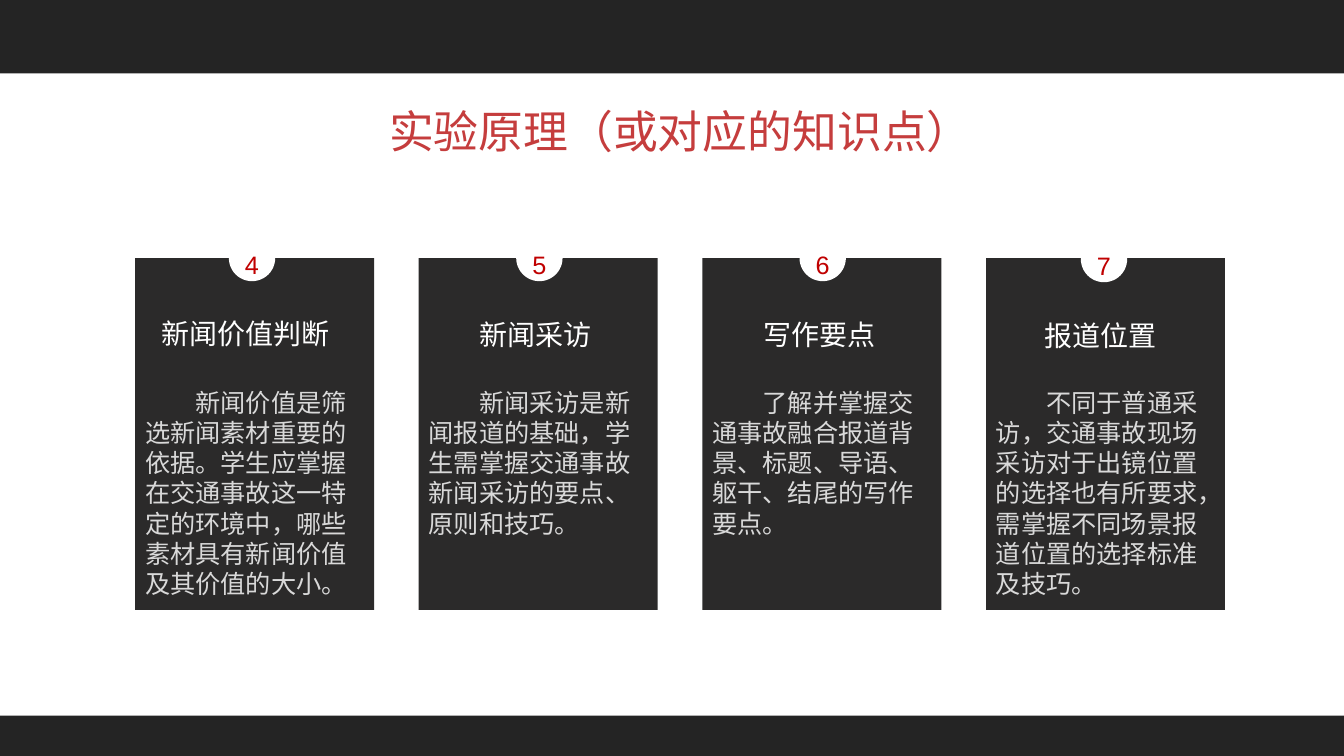
"""Build the slide on experiment principles with four numbered topic cards."""
from dataclasses import dataclass

from pptx import Presentation
from pptx.dml.color import RGBColor
from pptx.enum.shapes import MSO_SHAPE
from pptx.enum.text import MSO_ANCHOR, PP_ALIGN
from pptx.oxml.ns import qn
from pptx.shapes.autoshape import Shape
from pptx.slide import Slide
from pptx.util import Inches, Pt

RECTANGLE = MSO_SHAPE.RECTANGLE
BADGE = MSO_SHAPE.FLOWCHART_CONNECTOR
TOP, MIDDLE = MSO_ANCHOR.TOP, MSO_ANCHOR.MIDDLE
LEFT, CENTER = PP_ALIGN.LEFT, PP_ALIGN.CENTER

SLIDE_WIDTH, SLIDE_HEIGHT = 13.33, 7.5
CARD_LEFT, CARD_TOP, CARD_WIDTH, CARD_HEIGHT = 1.34, 2.56, 2.37, 3.49
CARD_STEP = 8.44 / 3
BADGE_SIZE = 0.46
HEADING_HEIGHT = 0.4
BAND, CARD, WHITE = "242424", "2B2A2A", "FFFFFF"
TITLE_RED, NUMBER_RED, BODY_GREY = "C53D3D", "C00000", "D9D9D9"
SANS_SC, SANS_JP, ARIAL = "Noto Sans CJK SC", "Noto Sans CJK JP", "Arial"


@dataclass(frozen=True)
class Box:
    left: float
    top: float
    width: float
    height: float

    def lengths(self) -> list[int]:
        return [Inches(v) for v in (self.left, self.top, self.width, self.height)]


@dataclass(frozen=True)
class Topic:
    number: str
    heading: str
    body: str
    badge_left: float
    badge_top: float
    heading_left: float
    heading_top: float
    heading_width: float = 1.57


TOPICS = [
    Topic("4", "新闻价值判断",
          "新闻价值是筛选新闻素材重要的依据。学生应掌握在交通事故这一特定的环境中，哪些素材具有新闻价值及其价值的大小。",
          2.27, 2.33, 1.5, 3.11, 2.02),
    Topic("5", "新闻采访",
          "新闻采访是新闻报道的基础，学生需掌握交通事故新闻采访的要点、原则和技巧。",
          5.12, 2.33, 4.66, 3.12),
    Topic("6", "写作要点",
          "了解并掌握交通事故融合报道背景、标题、导语、躯干、结尾的写作要点。",
          7.93, 2.33, 7.47, 3.12),
    Topic("7", "报道位置",
          "不同于普通采访，交通事故现场采访对于出镜位置的选择也有所要求，需掌握不同场景报道位置的选择标准及技巧。",
          10.72, 2.34, 10.26, 3.13),
]


def color(value: str) -> RGBColor:
    return RGBColor.from_string(value)


def add_block(slide: Slide, kind: MSO_SHAPE, box: Box, fill: str) -> Shape:
    block = slide.shapes.add_shape(kind, *box.lengths())
    block.shadow.inherit = False
    block.fill.solid()
    block.fill.fore_color.rgb = color(fill)
    block.line.fill.background()
    return block


def write(shape: Shape, text: str, *, size: float, font: str, ink: str,
          align: PP_ALIGN = LEFT, anchor: MSO_ANCHOR = MIDDLE,
          side: float = 0.1, top: float = 0.0, indent: float = 0.0,
          line_height: float | None = None) -> None:
    frame = shape.text_frame
    frame.word_wrap = True
    frame.vertical_anchor = anchor
    frame.margin_left = frame.margin_right = Inches(side)
    frame.margin_top, frame.margin_bottom = Inches(top), 0
    paragraph = frame.paragraphs[0]
    paragraph.alignment = align
    if line_height:
        paragraph.line_spacing = Pt(line_height)
    if indent:
        properties = paragraph._p.get_or_add_pPr()
        properties.set("marL", "0")
        properties.set("indent", str(Inches(indent)))
    run = paragraph.add_run()
    run.text = text
    run.font.size = Pt(size)
    run.font.name = font
    run.font.color.rgb = color(ink)
    east_asian = run._r.get_or_add_rPr().makeelement(qn("a:ea"), {"typeface": font})
    run.font._element.find(qn("a:latin")).addnext(east_asian)


def add_label(slide: Slide, text: str, box: Box, *, size: float, font: str, ink: str) -> None:
    write(slide.shapes.add_textbox(*box.lengths()), text, size=size, font=font, ink=ink)


def add_topic(slide: Slide, topic: Topic, left: float) -> None:
    card = add_block(slide, RECTANGLE, Box(left, CARD_TOP, CARD_WIDTH, CARD_HEIGHT), CARD)
    write(card, topic.body, size=18, font=SANS_SC, ink=BODY_GREY,
          anchor=TOP, top=1.28, indent=0.5, line_height=21.6)
    badge = add_block(slide, BADGE,
                      Box(topic.badge_left, topic.badge_top, BADGE_SIZE, BADGE_SIZE), WHITE)
    write(badge, topic.number, size=18, font=ARIAL, ink=NUMBER_RED,
          align=CENTER, anchor=TOP, side=0, top=0.08)
    add_label(slide, topic.heading,
              Box(topic.heading_left, topic.heading_top, topic.heading_width, HEADING_HEIGHT),
              size=20, font=SANS_SC, ink=WHITE)


def main() -> None:
    deck = Presentation()
    deck.slide_width, deck.slide_height = Inches(SLIDE_WIDTH), Inches(SLIDE_HEIGHT)
    slide = deck.slides.add_slide(deck.slide_layouts[6])
    for top, height in ((0, 0.73), (7.1, 0.4)):
        add_block(slide, RECTANGLE, Box(0, top, SLIDE_WIDTH, height), BAND)
    add_label(slide, "实验原理（或对应的知识点）", Box(3.76, 0.98, 6.42, 0.64),
              size=32, font=SANS_JP, ink=TITLE_RED)
    for position, topic in enumerate(TOPICS):
        add_topic(slide, topic, CARD_LEFT + position * CARD_STEP)
    deck.save("out.pptx")


if __name__ == "__main__":
    main()
